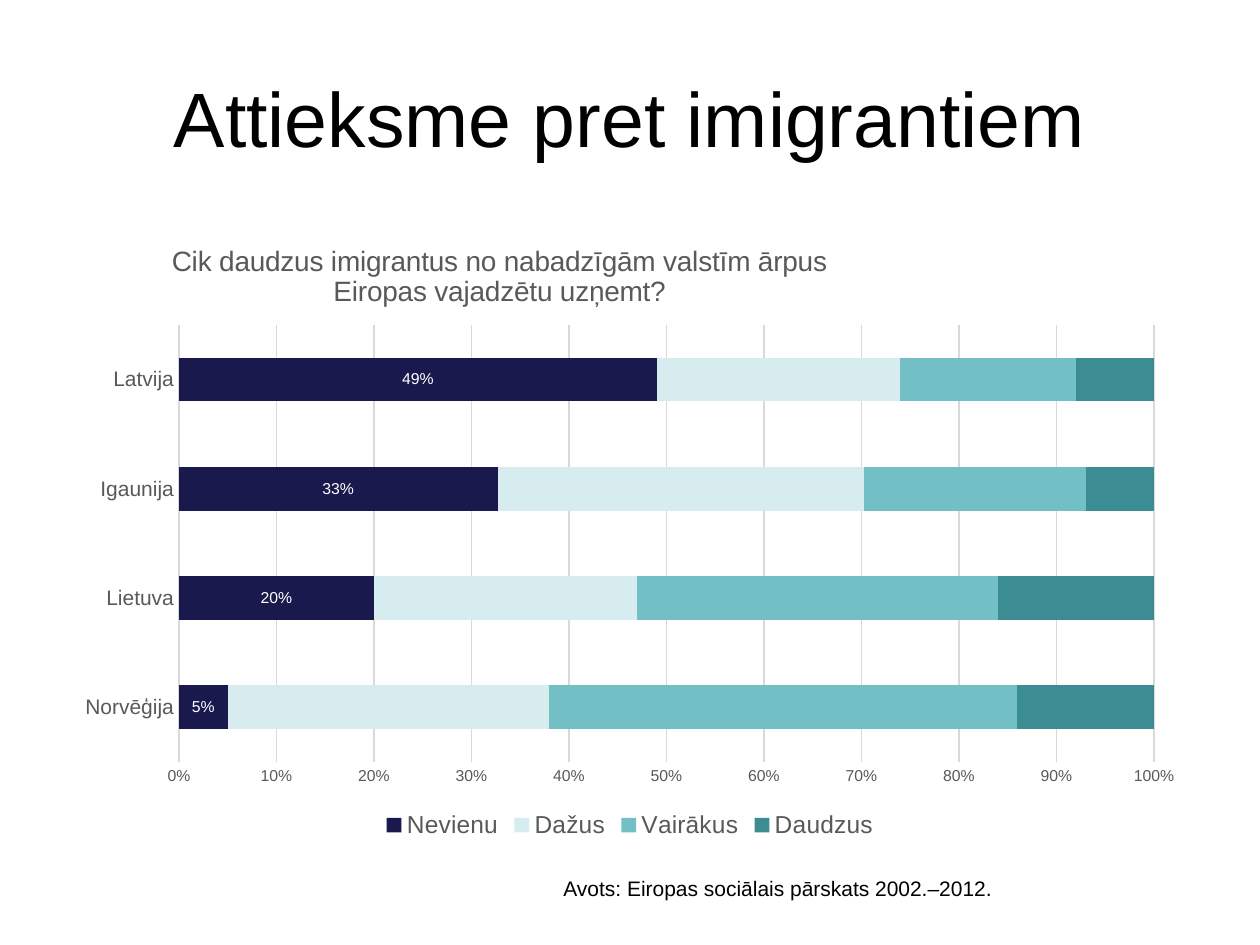
from dataclasses import dataclass
from typing import Optional

from lxml.etree import SubElement
from pptx import Presentation
from pptx.chart.data import CategoryChartData as ChartData
from pptx.dml.color import RGBColor
from pptx.enum.chart import (
    XL_CHART_TYPE as ChartType,
    XL_LABEL_POSITION as LabelPosition,
    XL_LEGEND_POSITION as LegendPosition,
    XL_TICK_MARK as TickMark,
)
from pptx.enum.text import MSO_ANCHOR as Anchor, PP_ALIGN as Align
from pptx.oxml.ns import qn
from pptx.util import Emu, Pt

EMU_PER_PX = 914400 / 126
FONT = "Arial"
BLACK, WHITE, GREY, PALE = "000000", "FFFFFF", "595959", "D9D9D9"


@dataclass
class Box:
    left: int
    top: int
    width: int
    height: int

    def emu(self) -> list[Emu]:
        return [px(n) for n in (self.left, self.top, self.width, self.height)]


@dataclass
class Label:
    text: str
    box: Box
    size: int
    align: Align
    anchor: Anchor


@dataclass
class Answer:
    name: str
    values: tuple[float, ...]
    colour: str
    label_colour: Optional[str] = None


LABELS = [
    Label("Attieksme pret imigrantiem", Box(63, 38, 1134, 157), 44,
          Align.CENTER, Anchor.MIDDLE),
    Label("Avots: Eiropas sociālais pārskats 2002.–2012.",
          Box(551, 869, 674, 38), 12, Align.LEFT, Anchor.TOP),
]

CHART = Box(63, 220, 1134, 624)
PLOT = Box(179, 325, 975, 437)
CHART_TITLE = Box(168, 240, 656, 62)
QUESTION = ("Cik daudzus imigrantus no nabadzīgām valstīm ārpus\n"
            "Eiropas vajadzētu uzņemt?")
COUNTRIES = ("Norvēģija", "Lietuva", "Igaunija", "Latvija")
ANSWERS = [
    Answer("Nevienu", (0.05, 0.20, 0.33, 0.49), "19194D", WHITE),
    Answer("Dažus", (0.33, 0.27, 0.38, 0.25), "D6ECEE"),
    Answer("Vairākus", (0.48, 0.37, 0.23, 0.18), "72BFC5"),
    Answer("Daudzus", (0.14, 0.16, 0.07, 0.08), "3C8C93"),
]


def px(count: int) -> Emu:
    return Emu(round(count * EMU_PER_PX))


def rgb(colour: str) -> RGBColor:
    return RGBColor.from_string(colour)


def set_all(target, values: dict) -> None:
    for name, value in values.items():
        setattr(target, name, value)


def set_font(font, size: int, colour: str) -> None:
    set_all(font, {"name": FONT, "size": Pt(size), "bold": False})
    font.color.rgb = rgb(colour)


def set_line(line, colour: str) -> None:
    line.color.rgb = rgb(colour)
    line.width = Pt(0.75)


def add_label(page, label: Label) -> None:
    frame = page.shapes.add_textbox(*label.box.emu()).text_frame
    set_all(frame, {"word_wrap": True, "vertical_anchor": label.anchor})
    para = frame.paragraphs[0]
    para.alignment = label.align
    span = para.add_run()
    span.text = label.text
    set_font(span.font, label.size, BLACK)


def place(element, box: Box, sized: bool) -> None:
    """Fix a chart part at a box, as fractions of the chart frame."""
    for old in element.findall(qn("c:layout")):
        element.remove(old)
    layout = SubElement(element, qn("c:layout"))
    element.insert(1 if element.find(qn("c:tx")) is not None else 0, layout)
    manual = SubElement(layout, qn("c:manualLayout"))
    settings = {"layoutTarget": "inner"} if sized else {}
    settings |= {"xMode": "edge", "yMode": "edge",
                 "x": round((box.left - CHART.left) / CHART.width, 4),
                 "y": round((box.top - CHART.top) / CHART.height, 4)}
    if sized:
        settings |= {"w": round(box.width / CHART.width, 4),
                     "h": round(box.height / CHART.height, 4)}
    for name, value in settings.items():
        SubElement(manual, qn(f"c:{name}")).set("val", str(value))


def style_series(series, answer: Answer) -> None:
    series.format.fill.solid()
    series.format.fill.fore_color.rgb = rgb(answer.colour)
    if answer.label_colour:
        labels = series.data_labels
        set_all(labels, {"show_value": True, "number_format": "0%",
                         "number_format_is_linked": False,
                         "position": LabelPosition.CENTER})
        set_font(labels.font, 9, answer.label_colour)


def style_axes(chart) -> None:
    for axis, size in ((chart.category_axis, 12), (chart.value_axis, 9)):
        set_all(axis, {"major_tick_mark": TickMark.NONE,
                       "minor_tick_mark": TickMark.NONE})
        set_font(axis.tick_labels.font, size, GREY)
    chart.category_axis.has_major_gridlines = False
    set_line(chart.category_axis.format.line, PALE)
    values = chart.value_axis
    values.has_major_gridlines = True
    set_line(values.major_gridlines.format.line, PALE)
    values.format.line.fill.background()
    set_all(values.tick_labels, {"number_format": "0%",
                                 "number_format_is_linked": False})


def add_answer_chart(page) -> None:
    data = ChartData(number_format="0%")
    data.categories = COUNTRIES
    for answer in ANSWERS:
        data.add_series(answer.name, answer.values)
    chart = page.shapes.add_chart(
        ChartType.BAR_STACKED_100, *CHART.emu(), data).chart
    set_font(chart.font, 10, BLACK)

    # Bars
    plot = chart.plots[0]
    set_all(plot, {"gap_width": 150, "overlap": 100,
                   "vary_by_categories": False})
    for series, answer in zip(plot.series, ANSWERS):
        style_series(series, answer)
    style_axes(chart)

    # Question above the bars
    chart.has_title = True
    title = chart.chart_title
    title.text_frame.text = QUESTION
    for para in title.text_frame.paragraphs:
        para.alignment = Align.CENTER
        for span in para.runs:
            set_font(span.font, 16, GREY)
    place(title._element, CHART_TITLE, sized=False)
    place(chart._chartSpace.find(".//" + qn("c:plotArea")), PLOT, sized=True)

    # Legend below the bars
    chart.has_legend = True
    set_all(chart.legend, {"position": LegendPosition.BOTTOM,
                           "include_in_layout": False})
    set_font(chart.legend.font, 14, GREY)


def main() -> None:
    deck = Presentation()
    set_all(deck, {"slide_width": px(1260), "slide_height": px(945)})
    page = deck.slides.add_slide(deck.slide_layouts[6])
    for label in LABELS:
        add_label(page, label)
    add_answer_chart(page)
    deck.save("out.pptx")


if __name__ == "__main__":
    main()
